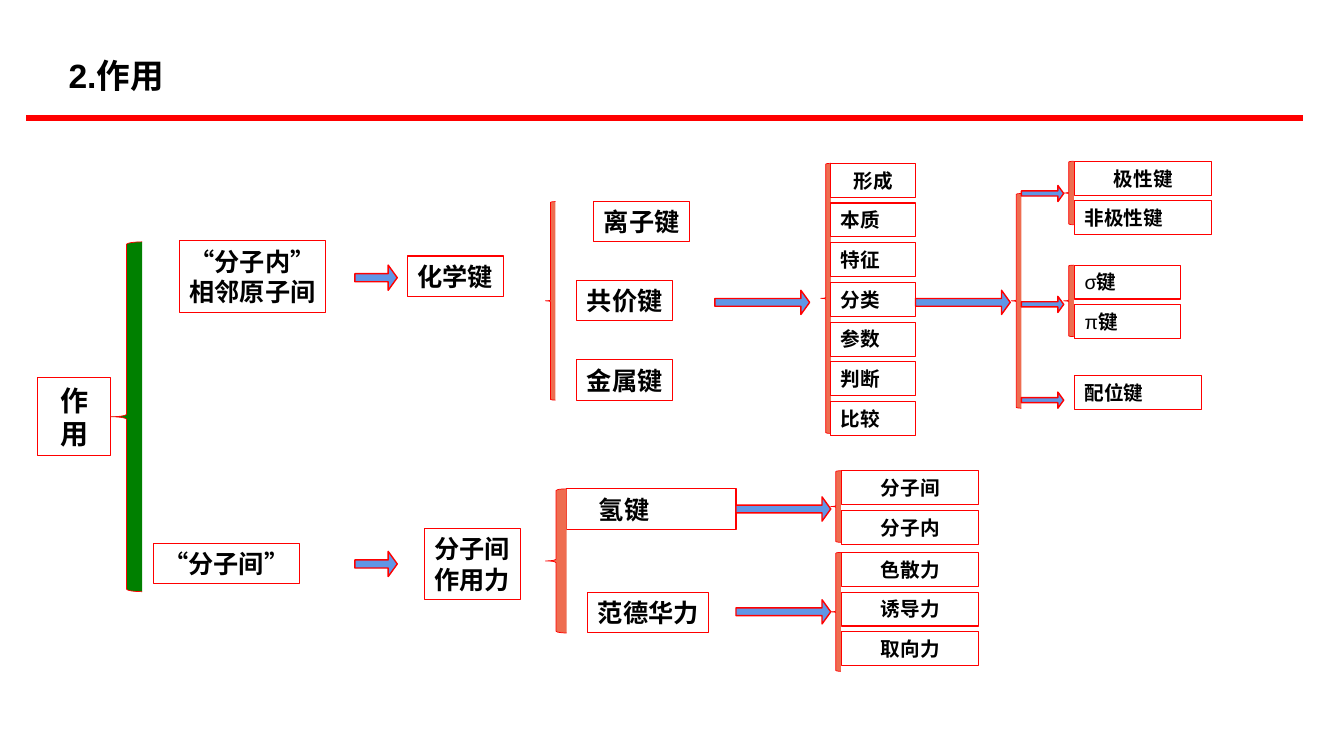
from itertools import groupby

from lxml import etree
from pptx import Presentation, util as u
from pptx.dml.color import RGBColor
from pptx.enum import lang, shapes, text
from pptx.oxml.ns import qn

COLORS = {"red": "FF0000", "green": "008000", "coral": "EE6D50",
          "blue": "6096E6", "black": "000000"}
LEFT, CENTER = text.PP_ALIGN.LEFT, text.PP_ALIGN.CENTER
SHAPE = shapes.MSO_SHAPE
GREEK = "σπ"


class Diagram:
    """Holds the style and the slide; lengths are grid columns and rows."""
    font = "Arial"
    cell = u.Inches(0.1)
    pitch, small_h = 3.94, 3.37

    def __init__(self, prs):
        self.s = prs.slides.add_slide(prs.slide_layouts[5])

    def grid(self, *cells):
        return [u.Emu(round(c * self.cell)) for c in cells]

    def rgb(self, name):
        return RGBColor.from_string(COLORS[name])

    def format_text(self, tf, size, align):
        for p in tf.paragraphs:
            p.alignment = align
            for r in p.runs:
                r.font.name, r.font.size = self.font, u.Pt(size)
                r.font.bold = r.text not in GREEK
                r.font.color.rgb = self.rgb("black")
                r.font.language_id = lang.MSO_LANGUAGE_ID.SIMPLIFIED_CHINESE

    def title(self, words, x, y, w, h):
        sp = self.s.shapes.title
        sp.left, sp.top, sp.width, sp.height = self.grid(x, y, w, h)
        tf = sp.text_frame
        tf.text = words
        tf.auto_size = text.MSO_AUTO_SIZE.NONE
        tf.vertical_anchor = text.MSO_ANCHOR.MIDDLE
        self.format_text(tf, 24, LEFT)

    def rule(self, x1, x2, y):
        line = self.s.shapes.add_connector(
            shapes.MSO_CONNECTOR.STRAIGHT, *self.grid(x1, y, x2, y))
        line.line.color.rgb, line.line.width = self.rgb("red"), u.Pt(4.5)
        etree.SubElement(line._element.spPr, qn("a:effectLst"))

    def shape(self, kind, at, fill, width):
        sp = self.s.shapes.add_shape(kind, *self.grid(*at))
        sp.shadow.inherit = False
        if fill:
            sp.fill.solid()
            sp.fill.fore_color.rgb = self.rgb(fill)
        else:
            sp.fill.background()
        sp.line.color.rgb, sp.line.width = self.rgb("red"), u.Pt(width)
        return sp

    def brace(self, x, y, w, h, fill="coral"):
        self.shape(SHAPE.LEFT_BRACE, (x, y, w, h), fill, 0.5)

    def arrow(self, x, y, w, h):
        sp = self.shape(SHAPE.RIGHT_ARROW, (x, y, w, h), "blue", 1)
        sp.adjustments[0], sp.adjustments[1] = 0.32, 0.36

    def box(self, words, x, y, w, h, size=18, align=CENTER, wrap=False, indent=1):
        tf = self.shape(SHAPE.RECTANGLE, (x, y, w, h), None, 0.75).text_frame
        tf.word_wrap = wrap
        tf.vertical_anchor = text.MSO_ANCHOR.MIDDLE
        tf.margin_left, = self.grid(indent)
        for i, row in enumerate(words.split("\n")):
            p = tf.paragraphs[0] if i == 0 else tf.add_paragraph()
            for _, chars in groupby(row, key=lambda c: c in GREEK):
                p.add_run().text = "".join(chars)
        self.format_text(tf, size, align)

    def stack(self, words, x, y, w, align=CENTER, first=None):
        """Small boxes one below another; the first may be aligned apart."""
        for i, word in enumerate(words):
            self.box(word, x, y + i * self.pitch, w, self.small_h, size=14,
                     align=first if first and i == 0 else align, wrap=True)


def main():
    prs = Presentation()
    prs.slide_width, prs.slide_height = u.Inches(13.33), u.Inches(7.5)
    d = Diagram(prs)

    # Heading
    d.title("2.作用", 5.8, 4.9, 34.6, 5)
    d.rule(2.6, 129.2, 11.7)

    # Root
    d.brace(11, 24, 3.1, 34.7, "green")
    d.box("作用", 3.7, 37.5, 7.3, 7.7, size=20, wrap=True)

    # Main boxes
    for words, x, y, w, h in [
            ("“分子内”\n相邻原子间", 17.8, 23.9, 14.5, 7.1),
            ("“分子间”", 15.2, 53.9, 14.5, 4),
            ("化学键", 40.4, 25.4, 9.5, 4),
            ("分子间\n作用力", 42.1, 52.4, 9.5, 7.1),
            ("离子键", 58.9, 20, 9.5, 4),
            ("共价键", 57.2, 27.8, 9.5, 4),
            ("金属键", 57.2, 35.7, 9.5, 4),
            ("范德华力", 58.3, 58.8, 12, 4)]:
        d.box(words, x, y, w, h)
    d.box("氢键", 56.2, 48.5, 16.8, 4, align=LEFT, wrap=True, indent=3.2)

    # Braces
    for x, y, w, h in [
            (54.1, 20, 1, 19.7), (54.1, 48.5, 2.1, 14.3),
            (81.4, 16.2, 1, 26.8), (100.3, 19.2, 1, 21.3),
            (82.4, 54.8, 1, 11.8), (82.4, 46.7, 1, 7.1),
            (105.5, 16, 1, 6.3), (105.5, 26.3, 1, 7.1)]:
        d.brace(x, y, w, h)

    # Arrows
    for y in (26.3, 54.7):
        d.arrow(35.2, y, 4.2, 2.5)
    for x, y in [(70.9, 28.8), (90.8, 28.8), (73, 49.3), (73, 59.5)]:
        d.arrow(x, y, 9.4, 2.4)
    for y in (18.4, 29.4, 38.9):
        d.arrow(101.3, y, 4.2, 1.6)

    # Detail lists
    d.stack(["形成", "本质", "特征", "分类", "参数", "判断", "比较"],
            82.4, 16.2, 8.4, LEFT, first=CENTER)
    d.stack(["极性键", "非极性键"], 106.6, 16, 13.6, LEFT, first=CENTER)
    d.stack(["σ键", "π键"], 106.6, 26.3, 10.5, LEFT)
    d.stack(["配位键"], 106.6, 37.3, 12.6, LEFT)
    d.stack(["分子间", "分子内"], 83.5, 46.7, 13.6)
    d.stack(["色散力", "诱导力", "取向力"], 83.5, 54.8, 13.6)

    prs.save("out.pptx")


if __name__ == "__main__":
    main()
